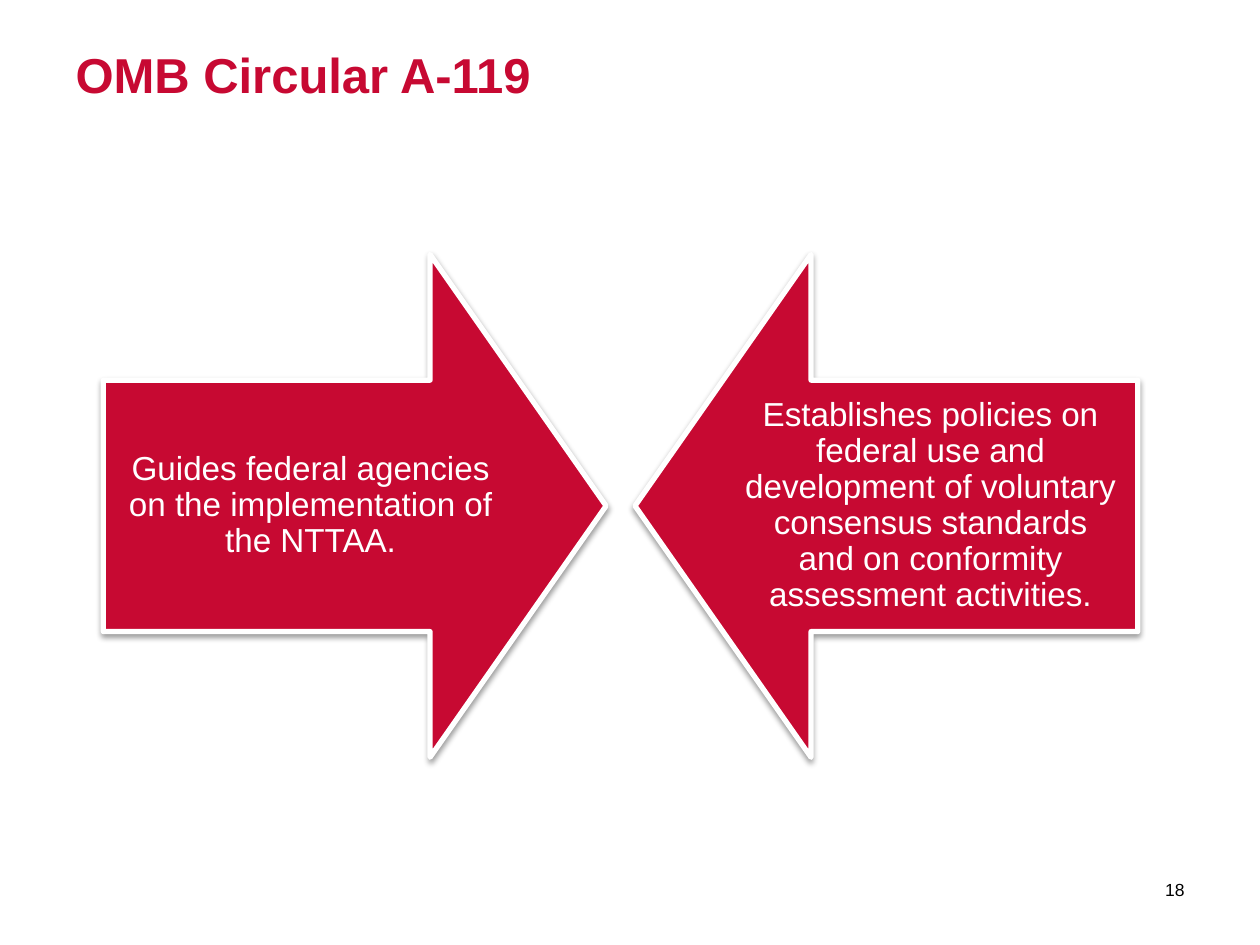
from lxml.etree import SubElement
from pptx import Presentation
from pptx.dml.color import RGBColor
from pptx.enum.shapes import MSO_SHAPE
from pptx.enum.text import MSO_ANCHOR, PP_ALIGN
from pptx.oxml.ns import qn
from pptx.util import Inches, Pt

RED = RGBColor(0xC7, 0x09, 0x32)
WHITE = RGBColor(0xFF, 0xFF, 0xFF)
BLACK = RGBColor(0, 0, 0)
SIDE = 3.99
TOP = 2.02


def set_text(frame, text, size, color, align, anchor, bold=False):
    frame.word_wrap = True
    frame.vertical_anchor = anchor
    frame.text = text
    para = frame.paragraphs[0]
    para.alignment = align
    font = para.runs[0].font
    font.name = "Arial"
    font.size = Pt(size)
    font.bold = bold
    font.color.rgb = color
    return para


def add_title(slide, text):
    title = slide.shapes.title
    title.left, title.top = Inches(0.5), Inches(0.3)
    title.width, title.height = Inches(9), Inches(1.25)
    set_text(title.text_frame, text, 28, RED, PP_ALIGN.LEFT, MSO_ANCHOR.TOP, True)


def add_shadow(shape):
    shape.shadow.inherit = False
    effects = shape._element.spPr.find(qn("a:effectLst"))
    outer = SubElement(effects, qn("a:outerShdw"), blurRad=str(Pt(3.1)),
                       dist=str(Pt(1.6)), dir="5400000", rotWithShape="0")
    color = SubElement(outer, qn("a:srgbClr"), val=str(BLACK))
    SubElement(color, qn("a:alpha"), val="38000")


def add_arrow(group, left, turn):
    arrow = group.shapes.add_shape(MSO_SHAPE.DOWN_ARROW, Inches(left), Inches(TOP),
                                   Inches(SIDE), Inches(SIDE))
    arrow.rotation = turn
    arrow.adjustments[0] = 0.5
    arrow.adjustments[1] = 0.35
    arrow.fill.solid()
    arrow.fill.fore_color.rgb = RED
    arrow.line.color.rgb = WHITE
    arrow.line.width = Pt(3)
    add_shadow(arrow)


def add_label(group, left, text):
    box = group.shapes.add_textbox(Inches(left), Inches(TOP + SIDE / 4),
                                   Inches(3.29), Inches(SIDE / 2))
    frame = box.text_frame
    frame.margin_left = frame.margin_right = Inches(0.15)
    frame.margin_top = frame.margin_bottom = Inches(0.15)
    para = set_text(frame, text, 19, WHITE, PP_ALIGN.CENTER, MSO_ANCHOR.MIDDLE)
    para.line_spacing = 0.9


def add_number(slide, text):
    box = slide.shapes.add_textbox(Inches(8.8), Inches(6.86), Inches(0.7), Inches(0.4))
    set_text(box.text_frame, text, 10, BLACK, PP_ALIGN.RIGHT, MSO_ANCHOR.MIDDLE)


def main():
    deck = Presentation()
    deck.slide_width, deck.slide_height = Inches(10), Inches(7.5)
    slide = deck.slides.add_slide(deck.slide_layouts[5])
    add_title(slide, "OMB Circular A-119")
    add_number(slide, "18")
    group = slide.shapes.add_group_shape()
    points = [
        (0.82, 270, 0.82, "Guides federal agencies on the implementation of the NTTAA."),
        (5.04, 90, 5.74, "Establishes policies on federal use and development of voluntary "
                         "consensus standards and on conformity assessment activities."),
    ]
    for left, turn, inset, text in points:
        add_arrow(group, left, turn)
        add_label(group, inset, text)
    deck.save("out.pptx")


if __name__ == "__main__":
    main()
